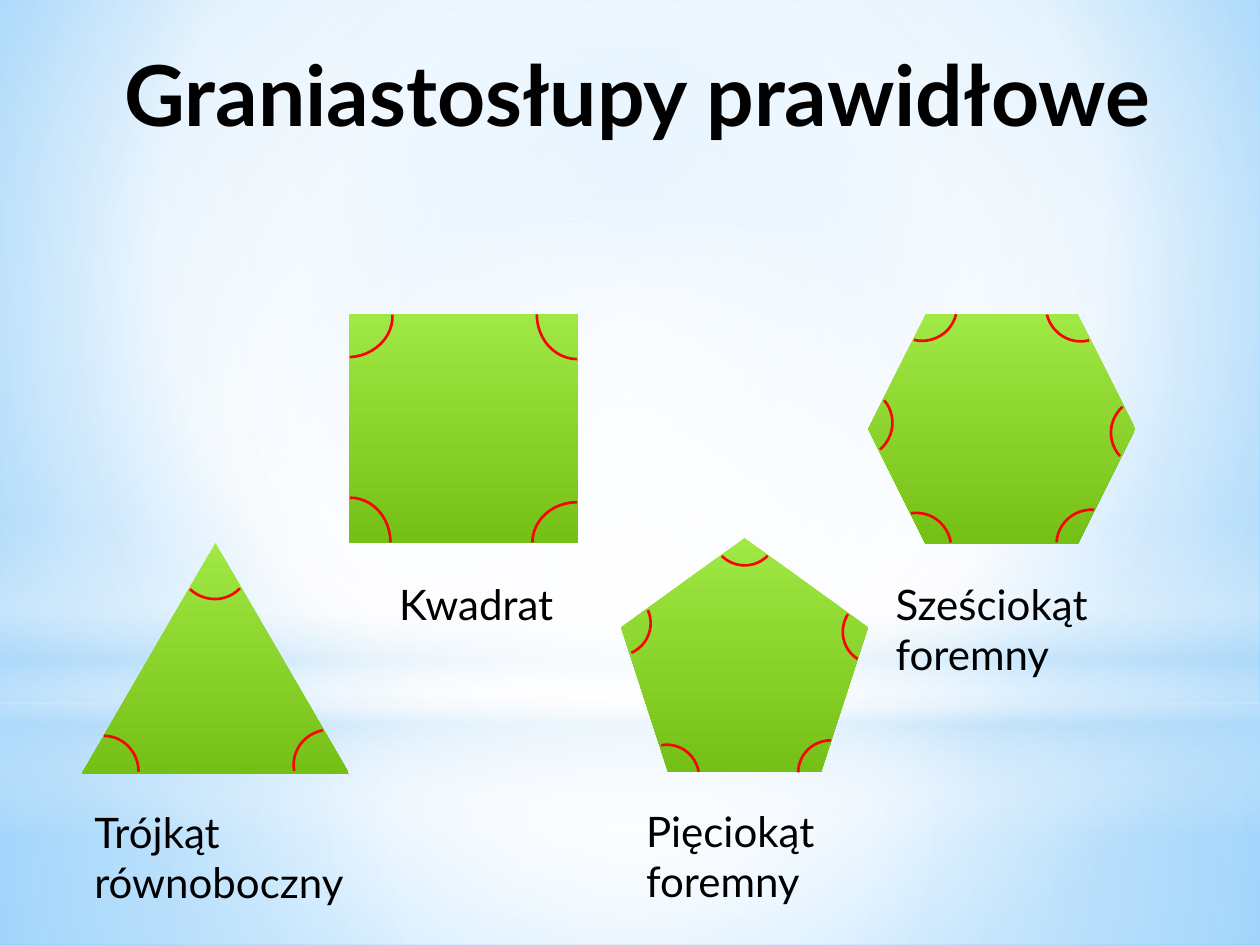
from lxml import etree
from pptx import Presentation
from pptx.dml.color import RGBColor
from pptx.enum import shapes, text
from pptx.oxml import ns
from pptx.util import Inches, Pt

COLORS = {"white": "FFFFFF", "pale": "B4DCFA", "sky": "9ED5FF", "blue": "5BB9FF",
          "lime": "A0E844", "green": "75C016", "red": "FF0000", "black": "000000"}
FONT = "Lato"
KIND = shapes.MSO_SHAPE
CENTER = (50, 50, 50, 50)

BACKDROP = [(0, "sky", 100), (60, "white", 100), (100, "blue", 100)]
BACKDROP_FOCUS = (20, 10, 20, 60)
FIGURE_FILL = [(0, "lime", 100), (100, "green", 100)]

GLOWS = [
    (KIND.RECTANGLE, (0, 5.58, 10, 1.92),
     [(0, "white", 91), (37, "white", 76), (100, "pale", 79)], CENTER),
    (KIND.RECTANGLE, (0, 0, 10, 5.58),
     [(0, "white", 89), (48, "white", 62), (100, "pale", 79)], CENTER),
    (KIND.RECTANGLE, (0, 4.12, 10, 2.5),
     [(0, "white", 0), (29, "white", 30), (45, "pale", 40), (55, "white", 26),
      (65, "pale", 60), (100, "white", 0)], None),
    (KIND.OVAL, (0, 1.75, 10, 5.58), [(0, "white", 100), (56, "white", 0)], CENTER),
]

TITLE = ("Graniastosłupy prawidłowe", (0.52, 0.29, 9.08, 0.91))
LABELS = [
    ("Trójkąt równoboczny", (0.65, 6.35, 2.23, 0.91)),
    ("Kwadrat", (3.07, 4.54, 1.49, 0.5)),
    ("Sześciokąt foremny", (7.01, 4.54, 1.87, 0.91)),
    ("Pięciokąt foremny", (5.03, 6.34, 1.76, 0.91)),
]

FIGURES = [
    {"kind": KIND.RECTANGLE, "place": (2.77, 2.49, 1.82, 1.82), "arc": (0.64, 0.71),
     "angles": [(2.46, 3.95, 0), (4.26, 2.14, 180), (4.26, 3.95, 270), (2.44, 2.16, 87.1)]},
    {"kind": KIND.ISOSCELES_TRIANGLE, "place": (0.65, 4.31, 2.12, 1.83), "arc": (0.55, 0.57),
     "angles": [(0.55, 5.84, 0), (2.34, 5.78, 259), (1.42, 4.19, 133)]},
    {"kind": KIND.HEXAGON, "place": (6.89, 2.49, 2.12, 1.83), "arc": (0.55, 0.56),
     "angles": [(7, 4.07, 350.8), (8.39, 4.04, 273.4), (6.53, 3.08, 49.2),
                (8.82, 3.15, 227.5), (7.04, 2.15, 103.2), (8.3, 2.15, 165.8)]},
    {"kind": KIND.REGULAR_PENTAGON, "place": (4.93, 4.27, 1.96, 1.86), "arc": (0.51, 0.52),
     "angles": [(5.65, 3.97, 134), (4.65, 4.69, 65.5), (6.69, 4.75, 212.2),
                (6.34, 5.87, 270), (5.04, 5.91, 349.7)]},
]


def color(name):
    return RGBColor.from_string(COLORS[name])


def add_node(parent, tag, **attributes):
    values = {key: str(value) for key, value in attributes.items()}
    return etree.SubElement(parent, ns.qn(tag), values)


def set_gradient(fill, element, stops, focus=None):
    fill.solid()
    solid = next(element.iter(ns.qn("a:solidFill")))
    gradient = etree.Element(ns.qn("a:gradFill"), rotWithShape="1")
    stop_list = add_node(gradient, "a:gsLst")
    for position, name, opacity in stops:
        stop = add_node(stop_list, "a:gs", pos=position * 1000)
        tone = add_node(stop, "a:srgbClr", val=COLORS[name])
        if opacity < 100:
            add_node(tone, "a:alpha", val=opacity * 1000)
    if focus:
        route = add_node(gradient, "a:path", path="circle")
        add_node(route, "a:fillToRect",
                 **{side: share * 1000 for side, share in zip("ltrb", focus)})
    else:
        add_node(gradient, "a:lin", ang=90 * 60000, scaled=0)
    solid.getparent().replace(solid, gradient)


def add_gradient_shape(parent, kind, place, stops, focus=None):
    shape = parent.add_shape(kind, *map(Inches, place))
    shape.shadow.inherit = False
    shape.line.fill.background()
    set_gradient(shape.fill, shape._element.spPr, stops, focus)


def add_arc(parent, place, rotation):
    arc = parent.add_shape(KIND.ARC, *map(Inches, place))
    arc.shadow.inherit = False
    arc.fill.background()
    arc.line.color.rgb = color("red")
    arc.line.width = Pt(1.5)
    arc.rotation = rotation


def add_text(page, words, place, size, bold=False, align=text.PP_ALIGN.LEFT):
    box = page.shapes.add_textbox(*map(Inches, place))
    box.text_frame.word_wrap = True
    box.text_frame.auto_size = text.MSO_AUTO_SIZE.SHAPE_TO_FIT_TEXT
    paragraph = box.text_frame.paragraphs[0]
    paragraph.text = words
    paragraph.alignment = align
    paragraph.font.name = FONT
    paragraph.font.size = Pt(size)
    paragraph.font.bold = bold
    paragraph.font.color.rgb = color("black")


def main():
    deck = Presentation()
    deck.slide_width, deck.slide_height = Inches(10), Inches(7.5)
    page = deck.slides.add_slide(deck.slide_layouts[6])
    set_gradient(page.background.fill, page._element, BACKDROP, BACKDROP_FOCUS)
    for kind, place, stops, focus in GLOWS:
        add_gradient_shape(page.shapes, kind, place, stops, focus)
    for words, place in LABELS:
        add_text(page, words, place, 24)
    for figure in FIGURES:
        group = page.shapes.add_group_shape().shapes
        add_gradient_shape(group, figure["kind"], figure["place"], FIGURE_FILL)
        for left, top, rotation in figure["angles"]:
            add_arc(group, (left, top, *figure["arc"]), rotation)
    add_text(page, *TITLE, 48, bold=True, align=text.PP_ALIGN.CENTER)
    deck.save("out.pptx")


if __name__ == "__main__":
    main()
